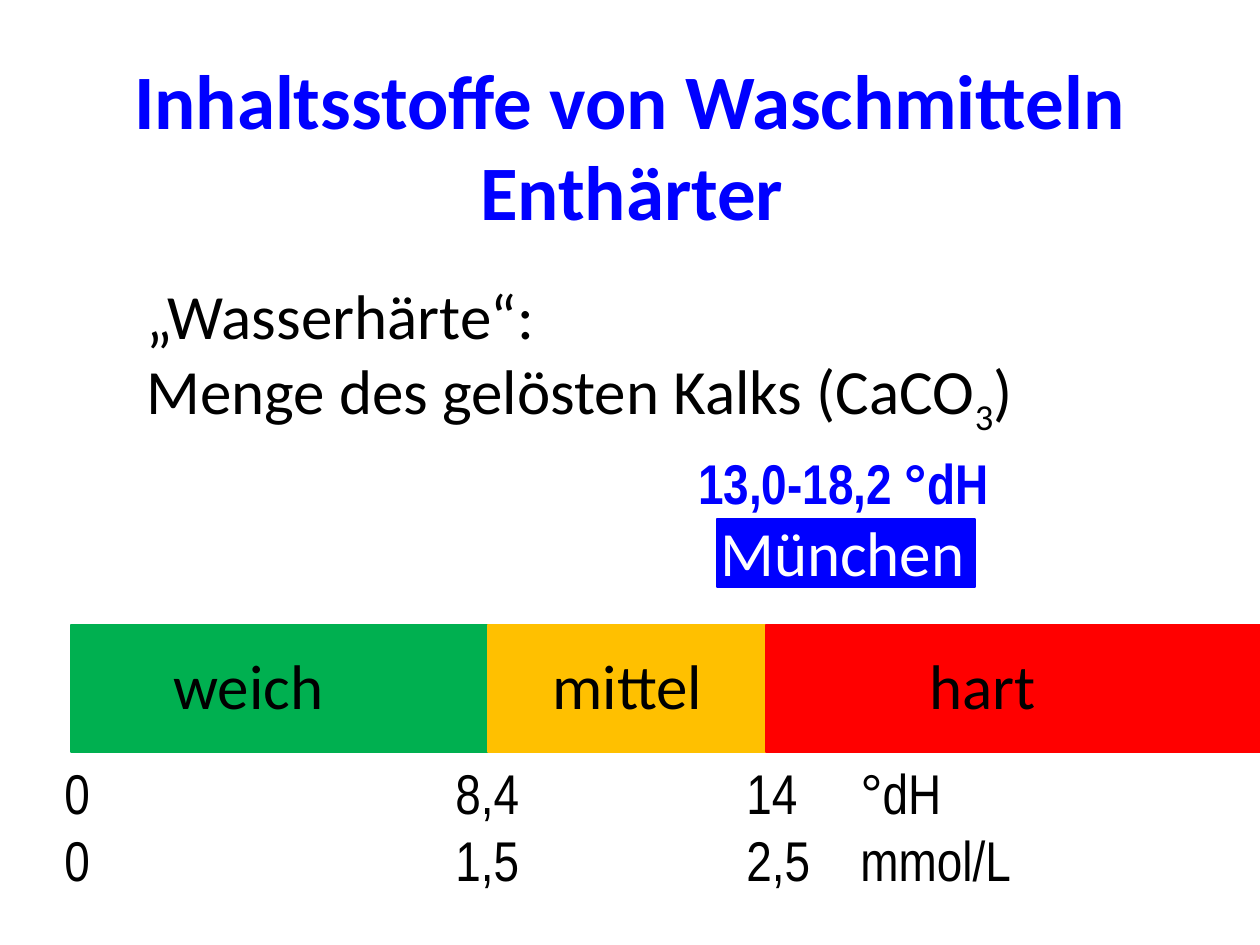
from dataclasses import dataclass

from lxml.etree import SubElement
from pptx import Presentation
from pptx.dml.color import RGBColor as Rgb
from pptx.enum.shapes import MSO_SHAPE as Form
from pptx.enum.text import MSO_ANCHOR as Anchor, MSO_AUTO_SIZE as Fit, PP_ALIGN as Align
from pptx.oxml.ns import qn
from pptx.util import Pt

SCALE = 914400 / 126


def px(n: int) -> int:
    return round(n * SCALE)


@dataclass(frozen=True)
class Theme:
    sans: str = "Calibri"
    slim: str = "Arial Narrow"
    head: int = 44
    body: int = 36
    tick: int = 32
    ink: str = "000000"
    pale: str = "FFFFFF"
    blue: str = "0000FF"
    green: str = "00B050"
    amber: str = "FFC000"
    red: str = "FF0000"


@dataclass(frozen=True)
class Box:
    x: int
    y: int
    w: int
    h: int

    def emu(self) -> tuple:
        return px(self.x), px(self.y), px(self.w), px(self.h)


@dataclass(frozen=True)
class Style:
    font: str
    size: int
    color: str
    bold: bool = False
    align: Align = Align.LEFT
    stops: tuple = ()


def write(frame, lines: list, style: Style) -> None:
    frame.word_wrap = True
    frame.auto_size = Fit.NONE
    for i, line in enumerate(lines):
        para = frame.paragraphs[0] if i == 0 else frame.add_paragraph()
        para.alignment = style.align
        if style.stops:
            tabs = SubElement(para._p.get_or_add_pPr(), qn("a:tabLst"))
            for stop in style.stops:
                SubElement(tabs, qn("a:tab"), pos=str(px(stop)), algn="l")
        font = para.font
        font.name, font.size, font.bold = style.font, Pt(style.size), style.bold
        font.color.rgb = Rgb.from_string(style.color)
        for part in line if isinstance(line, list) else [line]:
            para.add_run().text = part


def label(slide, box: Box, lines: list, style: Style):
    frame = slide.shapes.add_textbox(*box.emu()).text_frame
    write(frame, lines, style)
    return frame


def block(slide, box: Box, color: str) -> None:
    shape = slide.shapes.add_shape(Form.RECTANGLE, *box.emu())
    shape.shadow.inherit = False
    shape.fill.solid()
    shape.fill.fore_color.rgb = Rgb.from_string(color)
    shape.line.color.rgb = Rgb.from_string(color)
    shape.line.width = Pt(1)


def main() -> None:
    look = Theme()
    head = Style(look.sans, look.head, look.blue, True, Align.CENTER)
    body = Style(look.sans, look.body, look.ink)
    zones = Style(look.sans, look.body, look.ink, stops=(379, 756))
    ticks = Style(look.slim, look.tick, look.ink, stops=(391, 682, 796))
    city = Style(look.sans, look.body, look.pale)
    span = Style(look.slim, look.tick, look.blue, True, Align.CENTER)

    deck = Presentation()
    deck.slide_width, deck.slide_height = px(1260), px(945)
    slide = deck.slides.add_slide(deck.slide_layouts[5])

    title = slide.shapes.title
    title.left, title.top, title.width, title.height = Box(87, 50, 1086, 110).emu()
    title.text_frame.vertical_anchor = Anchor.MIDDLE
    write(title.text_frame, ["Inhaltsstoffe von Waschmitteln"], head)
    title.text_frame.paragraphs[0].line_spacing = 0.9
    label(slide, Box(161, 137, 942, 106), ["Enthärter"], head)

    text = label(slide, Box(134, 270, 995, 242),
                 ["„Wasserhärte“:", ["Menge des gelösten Kalks (CaCO", "3", ")"]], body)
    text.paragraphs[1].runs[1]._r.get_or_add_rPr().set("baseline", "-25000")

    edges = (71, 488, 766, 1260)
    for left, right, color in zip(edges, edges[1:], (look.green, look.amber, look.red)):
        block(slide, Box(left, 625, right - left, 127), color)
    label(slide, Box(161, 640, 1057, 89), ["weich\tmittel\thart"], zones)
    label(slide, Box(52, 752, 1010, 149),
          ["0\t8,4\t14\t°dH", "0\t1,5\t2,5\tmmol/L"], ticks)

    block(slide, Box(717, 519, 258, 68), look.blue)
    label(slide, Box(708, 507, 282, 89), ["München"], city)
    label(slide, Box(649, 442, 389, 81), ["13,0-18,2 °dH"], span)

    deck.save("out.pptx")


if __name__ == "__main__":
    main()
